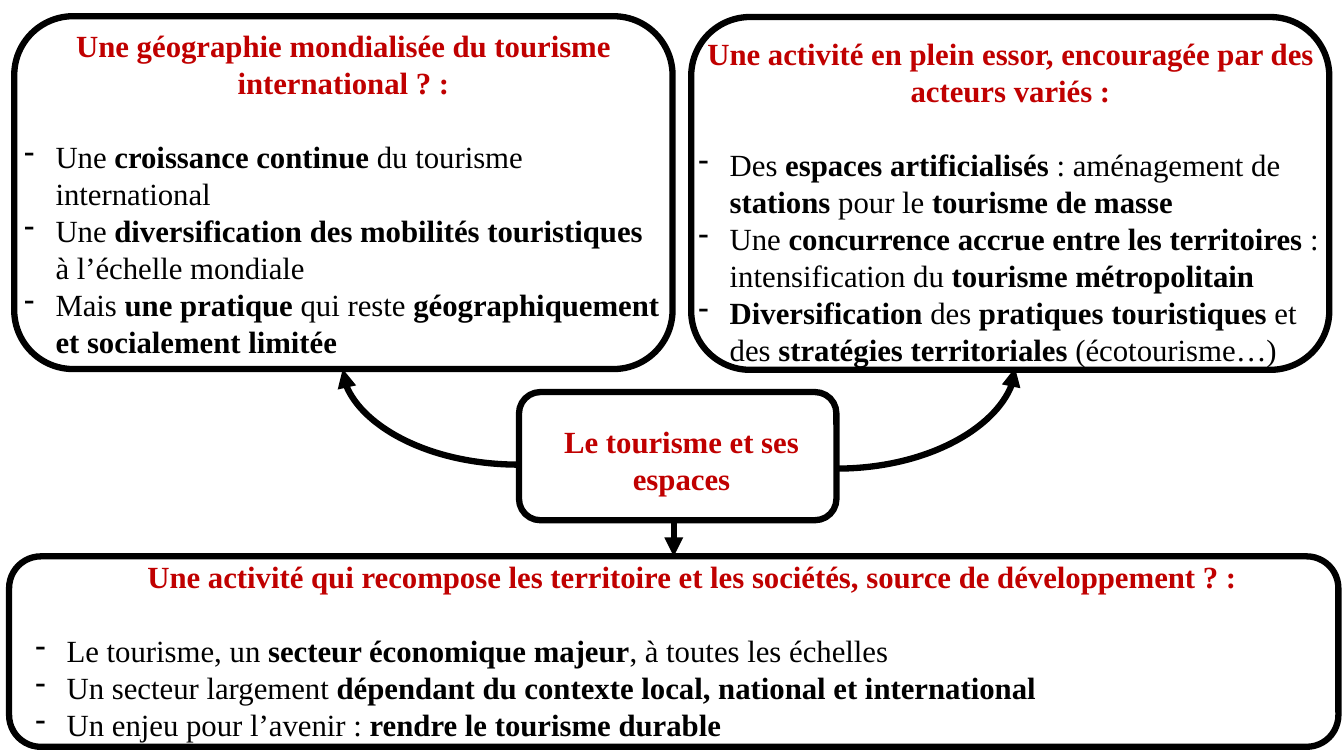
from pptx import Presentation
from pptx.dml.color import RGBColor
from pptx.enum.shapes import MSO_CONNECTOR as Link, MSO_SHAPE as Shape
from pptx.enum.text import MSO_AUTO_SIZE as Fit, PP_ALIGN as Align
from pptx.oxml.ns import qn
from pptx.util import Cm, Pt
from lxml.etree import SubElement as Sub

BLACK = "000000"
RED = "C00000"
EDGE = Pt(4.5)

WORLD = (
    "Une *croissance continue* du tourisme international",
    "Une *diversification des mobilités touristiques *à l’échelle mondiale",
    "Mais *une pratique *qui reste *géographiquement et socialement limitée*",
)
BOOM = (
    "Des *espaces artificialisés *: aménagement de *stations *pour le "
    "*tourisme de masse*",
    "Une *concurrence accrue entre les territoires *: intensification du "
    "*tourisme métropolitain*",
    "*Diversification *des *pratiques touristiques *et des "
    "*stratégies territoriales *(écotourisme…)",
)
GROWTH = (
    "Le tourisme, un *secteur économique majeur*, à toutes les échelles",
    "Un secteur largement *dépendant du contexte local, national et international*",
    "Un enjeu pour l’avenir : *rendre le tourisme durable*",
)


def tint(hue):
    return RGBColor.from_string(hue)


def add_frame(slide, *area):
    frame = slide.shapes.add_shape(Shape.ROUNDED_RECTANGLE, *map(Cm, area))
    frame.shadow.inherit = False
    frame.fill.background()
    frame.line.color.rgb = tint(BLACK)
    frame.line.width = EDGE
    return frame


def set_font(para, hue):
    para.font.name = "Times New Roman"
    para.font.size = Pt(22)
    para.font.color.rgb = tint(hue)


def add_point(body, text):
    para = body.add_paragraph()
    props = para._p.get_or_add_pPr()
    props.set("marL", str(Cm(0.79)))
    props.set("indent", str(-Cm(0.79)))
    Sub(props, qn("a:buFontTx"))
    Sub(props, qn("a:buChar")).set("char", "-")
    set_font(para, BLACK)
    for index, part in enumerate(text.split("*")):
        if part:
            run = para.add_run()
            run.text = part
            run.font.bold = index % 2 == 1


def add_text(slide, area, title, points=()):
    body = slide.shapes.add_textbox(*map(Cm, area)).text_frame
    body.word_wrap = True
    body.auto_size = Fit.SHAPE_TO_FIT_TEXT
    head = body.paragraphs[0]
    head.text = title
    head.alignment = Align.CENTER
    set_font(head, RED)
    head.font.bold = True
    if points:
        head.space_after = Pt(26.4)
    for point in points:
        add_point(body, point)


def add_arrow(slide, kind, *ends):
    arrow = slide.shapes.add_connector(kind, *map(Cm, ends))
    arrow.line.color.rgb = tint(BLACK)
    arrow.line.width = EDGE
    Sub(arrow.line._get_or_add_ln(), qn("a:tailEnd")).set("type", "triangle")
    props = arrow._element.spPr
    Sub(props, qn("a:effectLst"))
    if kind == Link.CURVE:
        props.find(qn("a:prstGeom")).set("prst", "curvedConnector2")
    return arrow


def main():
    deck = Presentation()
    deck.slide_width, deck.slide_height = Cm(33.87), Cm(19.05)
    slide = deck.slides.add_slide(deck.slide_layouts[6])

    add_frame(slide, 17.42, 0.43, 16.08, 8.89)
    add_frame(slide, 0.36, 0.41, 16.59, 8.89)
    add_frame(slide, 13.08, 9.88, 8, 3.23)
    base = add_frame(slide, 0.23, 14.02, 33.5, 4.8)

    down = add_arrow(slide, Link.STRAIGHT, 16.98, 13.11, 16.98, 14.02)
    down.end_connect(base, 0)
    add_arrow(slide, Link.CURVE, 21.08, 11.81, 25.58, 9.27)
    add_arrow(slide, Link.CURVE, 13.08, 11.71, 8.64, 9.3)

    add_text(slide, (0.64, 13.94, 33.6, 4.95),
             "Une activité qui recompose les territoire et les sociétés, "
             "source de développement ? :", GROWTH)
    add_text(slide, (17.35, 0.76, 16.23, 9.5),
             "Une activité en plein essor, encouragée par des acteurs variés :",
             BOOM)
    add_text(slide, (0.36, 0.56, 16.59, 8.71),
             "Une géographie mondialisée du tourisme international ? :", WORLD)
    add_text(slide, (12.73, 10.54, 8.89, 2.13), "Le tourisme et ses espaces")
    deck.save("out.pptx")


if __name__ == "__main__":
    main()
